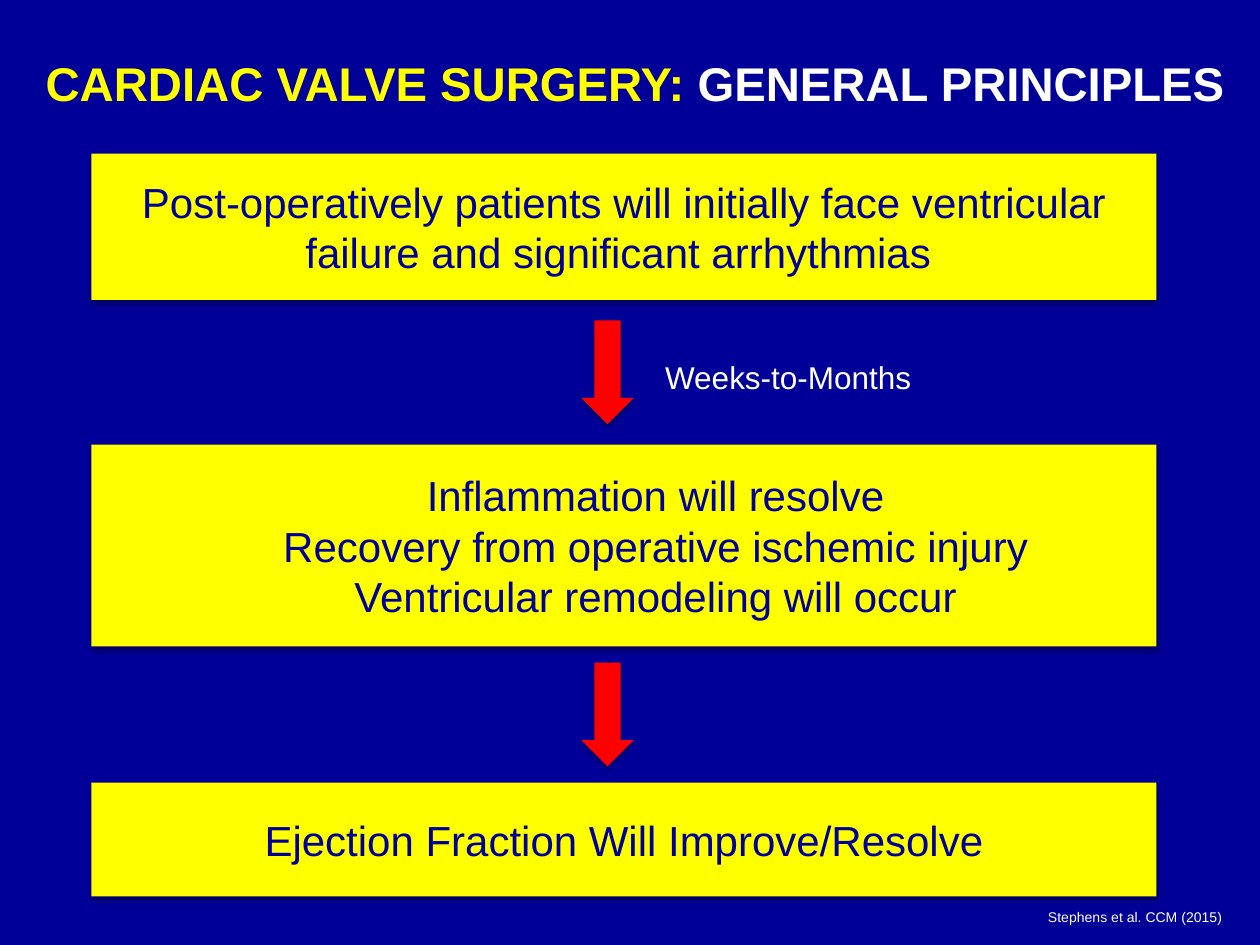
from lxml.etree import SubElement
from pptx import Presentation
from pptx.dml.color import RGBColor
from pptx.enum.shapes import MSO_SHAPE
from pptx.enum.text import MSO_ANCHOR, MSO_AUTO_SIZE, PP_ALIGN
from pptx.oxml.ns import qn
from pptx.util import Pt

# Content
NAVY, YELLOW, RED, WHITE = "000099", "FFFF00", "FF0000", "FFFFFF"
TITLE = [("CARDIAC VALVE SURGERY: ", YELLOW), ("GENERAL PRINCIPLES", WHITE)]
STAGES = [  # top, height, paragraph level, lines
    (87.8, 83.6, 0, ["Post-operatively patients will initially face "
                     "ventricular failure and significant arrhythmias "]),
    (254, 115.4, 1, ["Inflammation will resolve",
                     "Recovery from operative ischemic injury",
                     "Ventricular remodeling will occur"]),
    (447.3, 64.9, 0, ["Ejection Fraction Will Improve/Resolve"]),
]
LABELS = [  # text, size, left, top, width, height
    ("Stephens et al. CCM (2015)", 8, 591.8, 515.5, 128, 17.3),
    ("Weeks-to-Months", 18, 373, 200.9, 155.5, 28.8),
]
BOX_LEFT, BOX_WIDTH = 52.3, 608.6
ARROW_LEFT, ARROW_WIDTH, ARROW_HEIGHT = 332.2, 30, 59.3


def rgb(value):
    return RGBColor.from_string(value)


def style(font, size, color, bold=False):
    font.name, font.size, font.bold = "Arial", Pt(size), bold
    font.color.rgb = rgb(color)


def add_block(kind, left, top, width, height, color):
    """Borderless filled shape with a soft shadow below it."""
    sp = s.shapes.add_shape(kind, Pt(left), Pt(top), Pt(width), Pt(height))
    sp.fill.solid()
    sp.fill.fore_color.rgb = rgb(color)
    sp.line.fill.background()
    sp.shadow.inherit = False
    effects = sp._element.spPr.find(qn("a:effectLst"))
    shadow = SubElement(effects, qn("a:outerShdw"), blurRad=str(Pt(3.1)),
                        dist=str(Pt(1.8)), dir="5400000", rotWithShape="0")
    black = SubElement(shadow, qn("a:srgbClr"), val="000000")
    SubElement(black, qn("a:alpha"), val="35000")
    return sp


prs = Presentation()
prs.slide_width, prs.slide_height = Pt(720), Pt(540)
s = prs.slides.add_slide(prs.slide_layouts[5])
s.background.fill.solid()
s.background.fill.fore_color.rgb = rgb(NAVY)

# Title
title = s.shapes.title
title.left, title.top, title.width, title.height = map(Pt, (15.1, 21.6, 695.5, 45.4))
tf = title.text_frame
tf.auto_size = MSO_AUTO_SIZE.NONE
tf.vertical_anchor = MSO_ANCHOR.BOTTOM
p = tf.paragraphs[0]
p.alignment = PP_ALIGN.CENTER
for text, color in TITLE:
    r = p.add_run()
    r.text = text
    style(r.font, 27, color, bold=True)

# Stage boxes
for top, height, level, lines in STAGES:
    sp = add_block(MSO_SHAPE.RECTANGLE, BOX_LEFT, top, BOX_WIDTH, height, YELLOW)
    tf = sp.text_frame
    tf.word_wrap = True
    tf.vertical_anchor = MSO_ANCHOR.MIDDLE
    tf.text = "\n".join(lines)
    for p in tf.paragraphs:
        p.alignment, p.level = PP_ALIGN.CENTER, level
        for r in p.runs:
            style(r.font, 24, NAVY)

# Arrows, centred in the gaps between boxes
for (top, height, *_), (next_top, *_) in zip(STAGES, STAGES[1:]):
    middle = (top + height + next_top) / 2
    add_block(MSO_SHAPE.DOWN_ARROW, ARROW_LEFT, middle - ARROW_HEIGHT / 2,
              ARROW_WIDTH, ARROW_HEIGHT, RED)

# Time label and citation
for text, size, *place in LABELS:
    tf = s.shapes.add_textbox(*map(Pt, place)).text_frame
    tf.word_wrap = True
    tf.auto_size = MSO_AUTO_SIZE.SHAPE_TO_FIT_TEXT
    tf.text = text
    style(tf.paragraphs[0].runs[0].font, size, WHITE)

prs.save("out.pptx")
